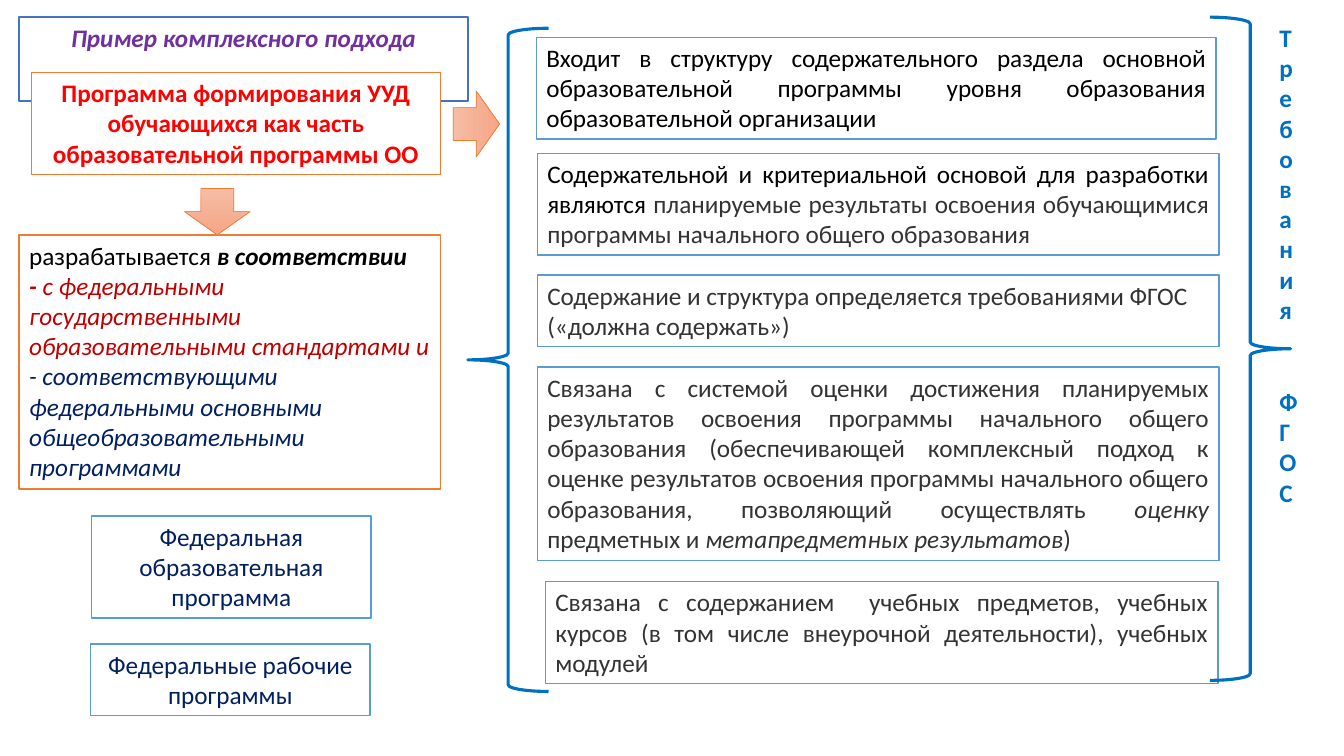
import copy

import pptx
import pptx.dml.color
import pptx.enum.shapes
import pptx.enum.text
import pptx.oxml.ns
import pptx.util

Inches = pptx.util.Inches
Pt = pptx.util.Pt
MSO_SHAPE = pptx.enum.shapes.MSO_SHAPE
ALIGN = pptx.enum.text.PP_ALIGN

BLACK, GREY, NAVY = "000000", "333333", "002060"
RED, DARK_RED, PURPLE = "FF0000", "C00000", "7030A0"
ORANGE, SKY, BLUE, INDIGO = "ED7D31", "5B9BD5", "0070C0", "4472C4"
ARROW_SHADES = ((0, "F7BDA5"), (0.5, "F5B196"), (1, "F8A582"))
BOLD, ITALIC = {"bold": True}, {"italic": True}
BOLD_ITALIC = {**BOLD, **ITALIC}
FRAME_FORMAT = {
    "word_wrap": True,
    "auto_size": pptx.enum.text.MSO_AUTO_SIZE.SHAPE_TO_FIT_TEXT,
    "vertical_anchor": pptx.enum.text.MSO_ANCHOR.TOP,
    "margin_left": Inches(0.1),
    "margin_right": Inches(0.1),
    "margin_top": Inches(0.05),
    "margin_bottom": Inches(0.05),
}

REQUIREMENTS = (
    ((5.32, 0.37, 6.74, 1.01), ALIGN.JUSTIFY, [
        ("Входит в структуру содержательного раздела основной образовательной "
         "программы уровня образования образовательной организации", BLACK, {})]),
    ((5.33, 1.52, 6.76, 1.01), ALIGN.JUSTIFY, [
        ("Содержательной и критериальной основой для разработки являются ", BLACK, {}),
        ("планируемые результаты освоения обучающимися программы начального "
         "общего образования", GREY, {})]),
    ((5.33, 2.73, 6.76, 0.71), ALIGN.LEFT, [
        ("Содержание и структура определяется требованиями ФГОС "
         "(«должна содержать»)", GREY, {})]),
    ((5.33, 3.64, 6.76, 1.92), ALIGN.JUSTIFY, [
        ("Связана с системой оценки достижения планируемых результатов освоения "
         "программы начального общего образования (обеспечивающей комплексный "
         "подход к оценке результатов освоения программы начального общего "
         "образования, позволяющий осуществлять ", GREY, {}),
        ("оценку", GREY, ITALIC),
        (" предметных и ", GREY, {}),
        ("метапредметных результатов", GREY, ITALIC),
        (")", GREY, {})]),
    ((5.41, 5.77, 6.67, 1.01), ALIGN.JUSTIFY, [
        ("Связана с содержанием  учебных предметов, учебных курсов (в том числе "
         "внеурочной деятельности), учебных модулей", GREY, {})]),
)
FEDERAL_DOCUMENTS = (
    ((0.91, 5.12, 2.77, 1.01), "Федеральная образовательная программа"),
    ((0.9, 6.39, 2.77, 0.71), "Федеральные рабочие программы"),
)
COMPLIANCE = (
    (ALIGN.JUSTIFY, [("разрабатывается ", BLACK, {}),
                     ("в соответствии ", BLACK, BOLD_ITALIC)]),
    (ALIGN.LEFT, [("- ", DARK_RED, BOLD_ITALIC),
                  ("с федеральными государственными образовательными "
                   "стандартами и", DARK_RED, ITALIC)]),
    (ALIGN.LEFT, [("- соответствующими федеральными основными "
                   "общеобразовательными программами", NAVY, ITALIC)]),
)


def rgb(value):
    """Turn a hex string into a colour."""
    return pptx.dml.color.RGBColor.from_string(value)


def apply_format(target, values):
    """Set each named attribute on the target."""
    for name, value in values.items():
        setattr(target, name, value)


def outline(shape, color, width):
    """Give a shape a solid outline."""
    shape.line.color.rgb = rgb(color)
    shape.line.width = Pt(width)


def write(shape, paragraphs):
    """Fill a shape with aligned paragraphs of formatted runs."""
    frame = shape.text_frame
    apply_format(frame, FRAME_FORMAT)
    for index, (alignment, runs) in enumerate(paragraphs):
        paragraph = frame.add_paragraph() if index else frame.paragraphs[0]
        paragraph.alignment = alignment
        for text, color, style in runs:
            run = paragraph.add_run()
            run.text = text
            apply_format(run.font, {"name": "Calibri", "size": Pt(18), **style})
            run.font.color.rgb = rgb(color)


def add_preset(slide, preset, place, color, width, rotation=0):
    """Add an outlined preset shape without shadow."""
    shape = slide.shapes.add_shape(preset, *map(Inches, place))
    shape.shadow.inherit = False
    shape.rotation = rotation
    outline(shape, color, width)
    return shape


def add_box(slide, place, border, paragraphs):
    """Add a white bordered box with text."""
    box = add_preset(slide, MSO_SHAPE.RECTANGLE, place, border, 1)
    box.fill.solid()
    box.fill.fore_color.rgb = rgb("FFFFFF")
    write(box, paragraphs)


def add_brace(slide, place, rotation=0):
    """Add a blue curly brace."""
    brace = add_preset(slide, MSO_SHAPE.RIGHT_BRACE, place, BLUE, 2.25, rotation)
    brace.fill.background()


def add_arrow(slide, place, rotation=0):
    """Add a block arrow with a three-stop gradient."""
    arrow = add_preset(slide, MSO_SHAPE.DOWN_ARROW, place, ORANGE, 0.5, rotation)
    arrow.fill.gradient()
    arrow.fill.gradient_angle = 270
    stops = arrow.element.spPr.find(".//" + pptx.oxml.ns.qn("a:gsLst"))
    stops.insert(1, copy.deepcopy(stops[0]))
    for stop, (position, shade) in zip(arrow.fill.gradient_stops, ARROW_SHADES):
        stop.position = position
        stop.color.rgb = rgb(shade)


def add_title(slide):
    """Place and format the slide title."""
    title = slide.shapes.title
    place = map(Inches, (0.19, 0.17, 4.45, 0.4))
    apply_format(title, dict(zip(("left", "top", "width", "height"), place)))
    title.fill.solid()
    title.fill.fore_color.rgb = rgb("FFFFFF")
    outline(title, INDIGO, 1)
    write(title, [(ALIGN.CENTER, [("Пример комплексного подхода", PURPLE, BOLD_ITALIC)])])


def add_side_label(slide):
    """Add the narrow label that wraps letter by letter."""
    label = slide.shapes.add_textbox(*map(Inches, (12.59, 0.17, 0.43, 4.95)))
    write(label, [(ALIGN.LEFT, [(word, BLUE, BOLD)]) for word in ("Требования", "ФГОС")])
    label.text_frame.paragraphs[1].space_before = Pt(44)


def main():
    """Build the slide and save it."""
    deck = pptx.Presentation()
    deck.slide_width, deck.slide_height = Inches(13.33), Inches(7.5)
    slide = deck.slides.add_slide(deck.slide_layouts[5])
    add_title(slide)
    add_box(slide, (0.31, 0.72, 4.06, 1.01), ORANGE, [(ALIGN.CENTER, [
        ("Программа формирования УУД обучающихся как часть "
         "образовательной программы ОО", RED, BOLD)])])
    for place, alignment, runs in REQUIREMENTS:
        add_box(slide, place, SKY, [(alignment, runs)])
    add_brace(slide, (12, 0.17, 0.8, 6.58))
    add_side_label(slide)
    add_box(slide, (0.19, 2.33, 4.18, 2.52), ORANGE, COMPLIANCE)
    for place, text in FEDERAL_DOCUMENTS:
        add_box(slide, place, SKY, [(ALIGN.CENTER, [(text, NAVY, {})])])
    add_arrow(slide, (1.83, 1.87, 0.65, 0.46))
    add_brace(slide, (4.64, 0.28, 0.8, 6.58), 180)
    add_arrow(slide, (4.4, 1, 0.65, 0.46), 270)
    deck.save("out.pptx")


if __name__ == "__main__":
    main()
